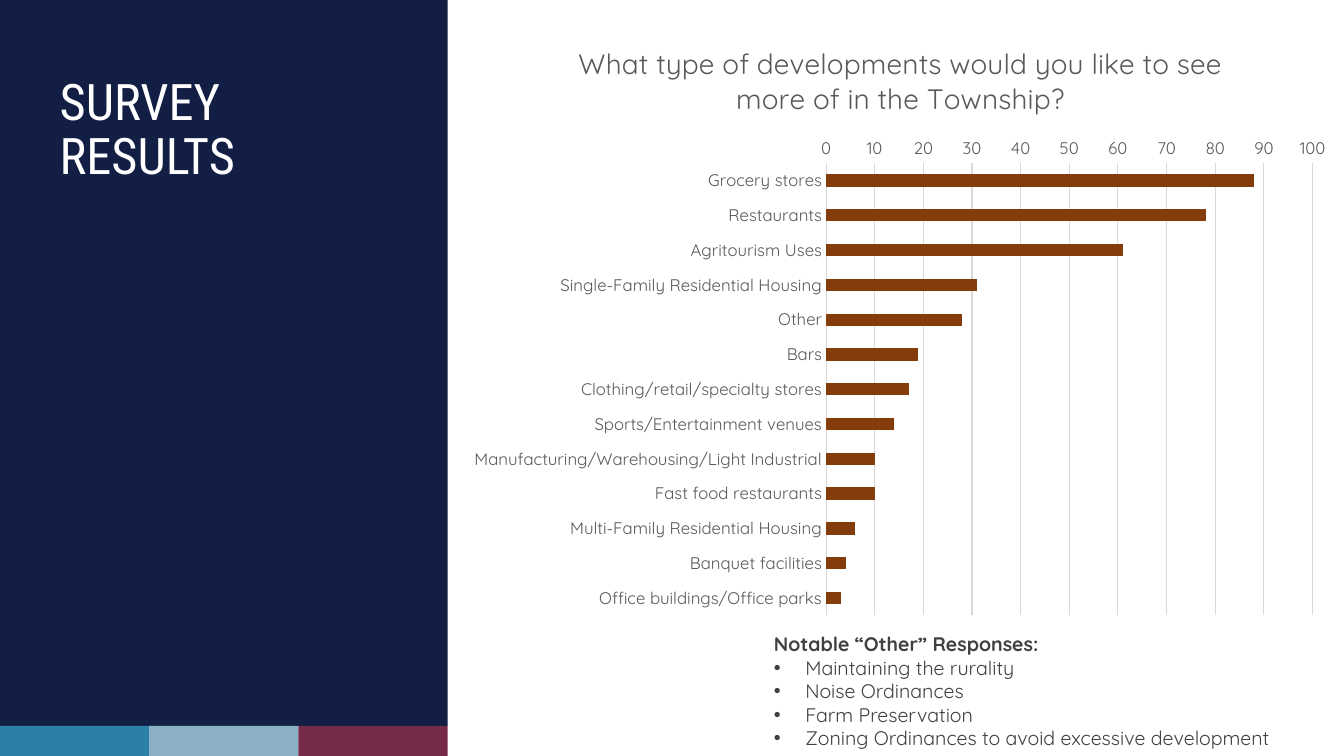
from dataclasses import dataclass

from lxml import etree
from pptx import Presentation
from pptx import util as u
from pptx.chart.data import CategoryChartData
from pptx.dml.color import RGBColor
from pptx.enum import chart as charts, shapes, text
from pptx.oxml import parse_xml
from pptx.oxml.ns import nsdecls, qn


@dataclass(frozen=True)
class Theme:
    heading_font: str = "Roboto Condensed"
    body_font: str = "Quicksand"
    title_size: int = 36
    chart_title_size: int = 20
    list_size: int = 14
    axis_size: int = 12
    white: str = "FFFFFF"
    navy: str = "121E44"
    strip: tuple = ("2C7FA5", "8CB0C3", "752B47")
    bar: str = "843C0B"
    grid: str = "D9D9D9"
    chart_text: str = "595959"
    list_text: str = "404040"


class SlideBuilder:
    def __init__(self, presentation, theme):
        self.theme = theme
        self.slide = presentation.slides.add_slide(presentation.slide_layouts[1])

    def style(self, font, name, size, color, bold=False):
        font.name, font.size, font.bold = name, u.Pt(size), bold
        font.color.rgb = RGBColor.from_string(color)

    def place(self, shape, left, top, width, height):
        shape.left, shape.top = u.Cm(left), u.Cm(top)
        shape.width, shape.height = u.Cm(width), u.Cm(height)
        tree = self.slide.shapes.element
        tree.append(shape.element)

    def rectangle(self, left, top, width, height, color):
        shape = self.slide.shapes.add_shape(
            shapes.MSO_SHAPE.RECTANGLE, u.Cm(left), u.Cm(top), u.Cm(width), u.Cm(height)
        )
        shape.shadow.inherit = False
        shape.fill.solid()
        shape.fill.fore_color.rgb = RGBColor.from_string(color)
        shape.line.fill.background()

    def title(self, wording, *box):
        shape = self.slide.shapes.title
        self.place(shape, *box)
        frame = shape.text_frame
        frame.text = wording
        frame.word_wrap = True
        frame.auto_size = text.MSO_AUTO_SIZE.NONE
        frame.vertical_anchor = text.MSO_ANCHOR.TOP
        frame.margin_right = u.Cm(1)
        paragraph = frame.paragraphs[0]
        paragraph.alignment = text.PP_ALIGN.LEFT
        paragraph.line_spacing = 0.9
        self.style(paragraph.font, self.theme.heading_font, self.theme.title_size, self.theme.white)

    def bullet_list(self, heading, items, *box):
        shape = self.slide.placeholders[1]
        self.place(shape, *box)
        frame = shape.text_frame
        frame.text = "\n".join([heading, *items])
        frame.word_wrap = True
        frame.auto_size = text.MSO_AUTO_SIZE.NONE
        for index, paragraph in enumerate(frame.paragraphs):
            is_heading = index == 0
            paragraph.space_before = u.Pt(0)
            self.style(
                paragraph.font, self.theme.body_font, self.theme.list_size,
                self.theme.list_text, is_heading,
            )
            self.bullet(paragraph, None if is_heading else "•")

    def bullet(self, paragraph, mark):
        indent = u.Cm(0.79) if mark else 0
        properties = paragraph._p.get_or_add_pPr()
        properties.set("marL", str(indent))
        properties.set("indent", str(-indent))
        if mark:
            tags = f'<a:buFont {nsdecls("a")} typeface="Arial"/>', f'<a:buChar {nsdecls("a")} char="{mark}"/>'
        else:
            tags = (f'<a:buNone {nsdecls("a")}/>',)
        position = properties.index(properties.find(qn("a:defRPr")))
        for offset, tag in enumerate(tags):
            properties.insert(position + offset, parse_xml(tag))

    def bar_chart(self, heading, answers, *box):
        theme = self.theme
        data = CategoryChartData()
        data.categories = list(answers)
        data.add_series("Series 1", list(answers.values()))
        chart = self.slide.shapes.add_chart(
            charts.XL_CHART_TYPE.BAR_CLUSTERED, *(u.Cm(length) for length in box), data
        ).chart
        self.style(chart.font, theme.body_font, theme.axis_size, theme.chart_text)
        chart.has_legend = False
        chart.has_title = True
        chart.chart_title.include_in_layout = False
        chart.chart_title.text_frame.text = heading
        paragraph = chart.chart_title.text_frame.paragraphs[0]
        self.style(paragraph.font, theme.body_font, theme.chart_title_size, theme.chart_text)

        plot = chart.plots[0]
        plot.gap_width = 182
        plot.vary_by_categories = False
        fill = plot.series[0].format.fill
        fill.solid()
        fill.fore_color.rgb = RGBColor.from_string(theme.bar)

        categories, values = chart.category_axis, chart.value_axis
        categories.reverse_order = True
        values.minimum_scale, values.maximum_scale, values.major_unit = 0, 100, 10
        values.has_major_gridlines = True
        values.format.line.fill.background()
        for axis in (categories, values):
            axis.major_tick_mark = axis.minor_tick_mark = charts.XL_TICK_MARK.NONE
            self.style(axis.tick_labels.font, theme.body_font, theme.axis_size, theme.chart_text)
        for line in (categories.format.line, values.major_gridlines.format.line):
            line.width = u.Pt(0.75)
            line.color.rgb = RGBColor.from_string(theme.grid)
        self.plot_layout(chart, x=0.416, y=0.236, w=0.549, h=0.745)

    def plot_layout(self, chart, **fractions):
        area = chart._chartSpace.chart.plotArea
        layout = area.find(qn("c:layout"))
        if layout is None:
            layout = etree.Element(qn("c:layout"))
            area.insert(0, layout)
        manual = etree.SubElement(layout, qn("c:manualLayout"))
        settings = {"layoutTarget": "inner", "xMode": "edge", "yMode": "edge", **fractions}
        for name, value in settings.items():
            etree.SubElement(manual, qn(f"c:{name}")).set("val", str(value))


ANSWERS = {
    "Grocery stores": 88,
    "Restaurants": 78,
    "Agritourism Uses": 61,
    "Single-Family Residential Housing": 31,
    "Other": 28,
    "Bars": 19,
    "Clothing/retail/specialty stores": 17,
    "Sports/Entertainment venues": 14,
    "Manufacturing/Warehousing/Light Industrial": 10,
    "Fast food restaurants": 10,
    "Multi-Family Residential Housing": 6,
    "Banquet facilities": 4,
    "Office buildings/Office parks": 3,
}
OTHER_RESPONSES = [
    "Maintaining the rurality",
    "Noise Ordinances",
    "Farm Preservation",
    "Zoning Ordinances to avoid excessive development",
]


def main():
    theme = Theme()
    presentation = Presentation()
    presentation.slide_width, presentation.slide_height = u.Cm(33.87), u.Cm(19.05)
    builder = SlideBuilder(presentation, theme)

    strip_width, strip_top = 3.76, 18.29
    builder.rectangle(0, 0, strip_width * len(theme.strip), strip_top, theme.navy)
    for index, color in enumerate(theme.strip):
        builder.rectangle(index * strip_width, strip_top, strip_width, 0.76, color)

    builder.title("SURVEY RESULTS", 1.25, 1.8, 9.2, 14.5)
    builder.bar_chart(
        "What type of developments would you like to see more of in the Township?",
        ANSWERS, 11.53, 0.5, 22.33, 15.3,
    )
    builder.bullet_list("Notable “Other” Responses:", OTHER_RESPONSES, 19.25, 15.8, 13.72, 3.25)
    presentation.save("out.pptx")


if __name__ == "__main__":
    main()
